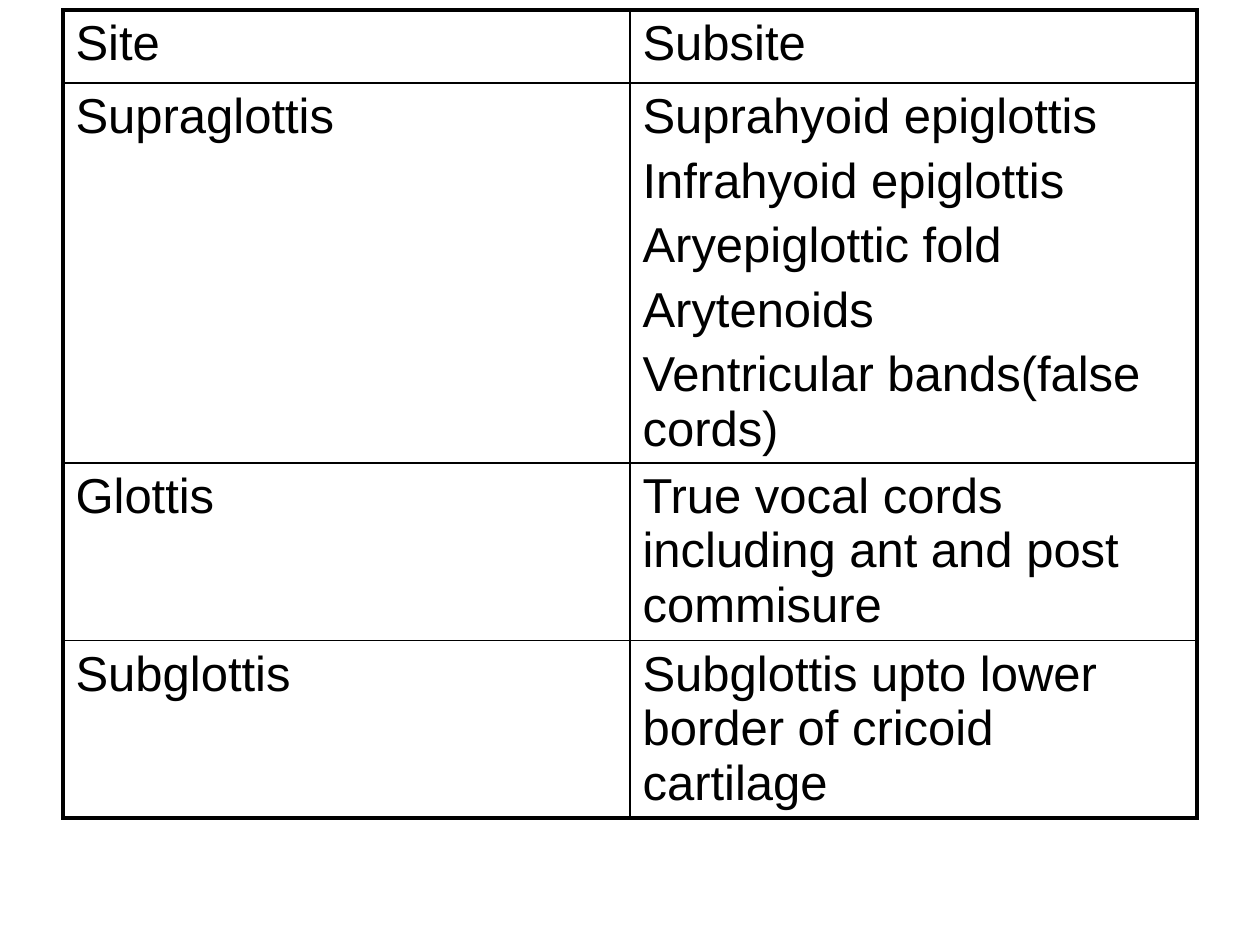
"""Build a slide with a table of laryngeal sites and their subsites."""
from lxml.etree import SubElement
from pptx import Presentation
from pptx.dml.color import RGBColor
from pptx.oxml.ns import qn
from pptx.util import Inches, Pt

ROWS = [
    (["Site"], ["Subsite"]),
    (["Supraglottis"], [
        "Suprahyoid epiglottis",
        "Infrahyoid epiglottis",
        "Aryepiglottic fold",
        "Arytenoids",
        "Ventricular bands(false cords)",
    ]),
    (["Glottis"], ["True vocal cords including ant and post commisure"]),
    (["Subglottis"], ["Subglottis upto lower border of cricoid cartilage"]),
]
ROW_HEIGHTS = [0.58, 3.01, 1.41, 1.41]
COLUMN_WIDTHS = [4.5, 4.5]
COLORS = {"ink": "000000"}
FONT, FONT_SIZE, SPACE_BEFORE = "Arial", 28, 5.6
OUTER_LINE, INNER_LINE = 2.25, 1


def write_cell(cell, lines):
    frame = cell.text_frame
    for index, line in enumerate(lines):
        paragraph = frame.add_paragraph() if index else frame.paragraphs[0]
        paragraph.space_before = Pt(SPACE_BEFORE)
        run = paragraph.add_run()
        run.text = line
        run.font.name = FONT
        run.font.size = Pt(FONT_SIZE)
        run.font.bold = False
        run.font.color.rgb = RGBColor.from_string(COLORS["ink"])


def draw_borders(cell, outer_sides):
    properties = cell._tc.get_or_add_tcPr()
    for side, is_outer in outer_sides.items():
        width = Pt(OUTER_LINE if is_outer else INNER_LINE)
        line = SubElement(properties, qn(f"a:ln{side}"), w=str(width))
        fill = SubElement(line, qn("a:solidFill"))
        SubElement(fill, qn("a:srgbClr"), val=COLORS["ink"])


def add_site_table(slide):
    frame = slide.shapes.add_table(
        len(ROWS), len(COLUMN_WIDTHS), Inches(0.5), Inches(0.08),
        Inches(sum(COLUMN_WIDTHS)), Inches(sum(ROW_HEIGHTS)))
    table = frame.table
    table.first_row = table.horz_banding = False
    for column, width in zip(table.columns, COLUMN_WIDTHS):
        column.width = Inches(width)
    for row_index, (contents, height) in enumerate(zip(ROWS, ROW_HEIGHTS)):
        table.rows[row_index].height = Inches(height)
        for column_index, lines in enumerate(contents):
            cell = table.cell(row_index, column_index)
            write_cell(cell, lines)
            draw_borders(cell, {
                "L": column_index == 0,
                "R": column_index == len(COLUMN_WIDTHS) - 1,
                "T": row_index == 0,
                "B": row_index == len(ROWS) - 1,
            })
            cell.fill.background()


def main():
    presentation = Presentation()
    presentation.slide_width = Inches(10)
    presentation.slide_height = Inches(7.5)
    slide = presentation.slides.add_slide(presentation.slide_layouts[6])
    add_site_table(slide)
    presentation.save("out.pptx")


if __name__ == "__main__":
    main()
